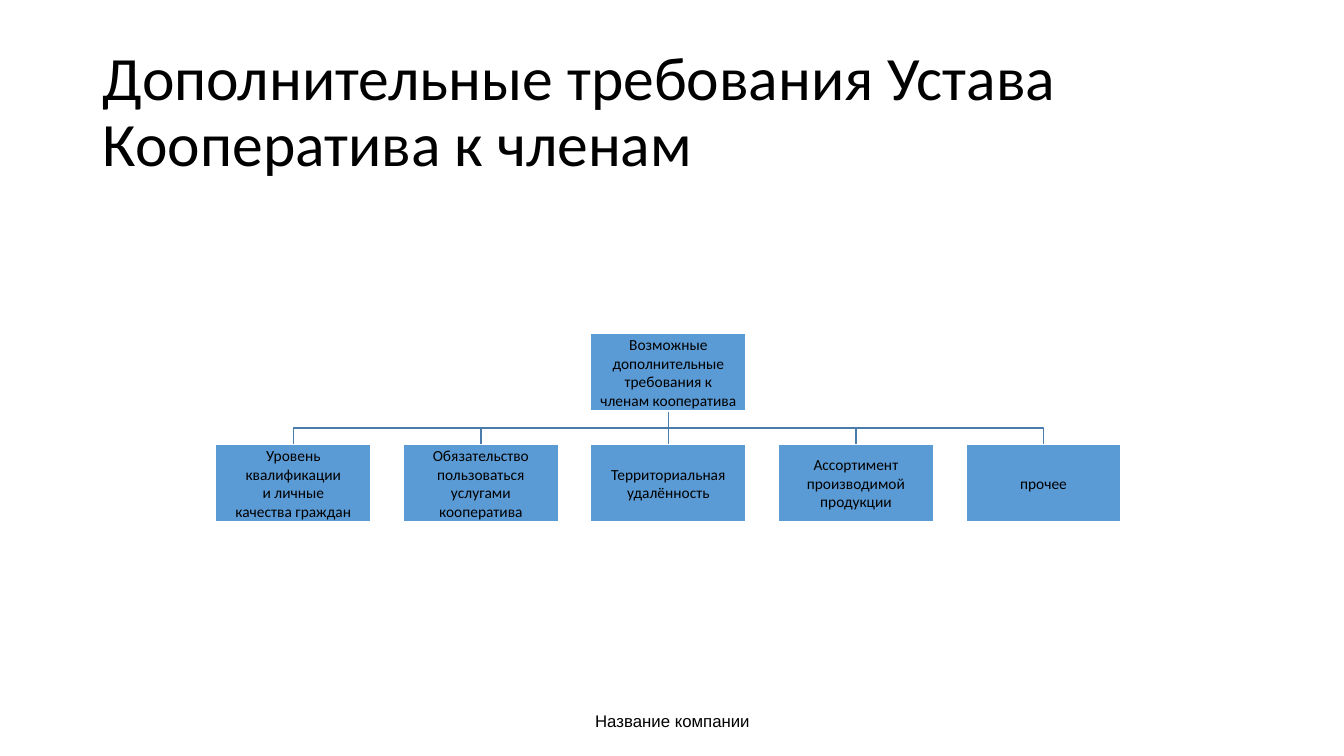
from collections import namedtuple

from lxml.etree import SubElement
from pptx import Presentation
from pptx.dml.color import RGBColor
from pptx.enum.shapes import MSO_CONNECTOR as Connector, MSO_SHAPE as Shape
from pptx.enum.text import MSO_ANCHOR as Anchor, PP_ALIGN as Align
from pptx.oxml.ns import qn
from pptx.util import Inches, Pt

BLACK = RGBColor(0x00, 0x00, 0x00)
WHITE = RGBColor(0xFF, 0xFF, 0xFF)
NODE_BLUE = RGBColor(0x5B, 0x9B, 0xD5)
LINE_BLUE = RGBColor(0x49, 0x7C, 0xAB)

Box = namedtuple("Box", "left top width height")  # inches

SLIDE_WIDTH, SLIDE_HEIGHT = 13.33, 7.5
TITLE_BOX = Box(0.92, 0.4, 11.5, 1.45)
CHART_BOX = Box(2.14, 3.31, 8.98, 1.87)
FOOTER_BOX = Box(4.42, 6.95, 4.5, 0.4)
NODE_WIDTH, NODE_HEIGHT = 1.54, 0.77

ROOT = ["Возможные", "дополнительные", "требования к", "членам кооператива"]
BRANCHES = [
    ["Уровень", "квалификации", "и личные", "качества граждан"],
    ["Обязательство", "пользоваться", "услугами", "кооператива"],
    ["Территориальная", "удалённость"],
    ["Ассортимент", "производимой", "продукции"],
    ["прочее"],
]


def inches(box):
    return [Inches(length) for length in box]


def write_text(shape, lines, size, font="Calibri", align=Align.CENTER,
               spacing=None, inset=None):
    """Fill a shape with one paragraph per line."""
    frame = shape.text_frame
    frame.word_wrap = True
    frame.vertical_anchor = Anchor.MIDDLE
    if inset is not None:
        frame.margin_left = frame.margin_right = Inches(inset)
        frame.margin_top = frame.margin_bottom = Inches(inset)
    for index, line in enumerate(lines):
        para = frame.paragraphs[0] if index == 0 else frame.add_paragraph()
        para.alignment = align
        para.line_spacing = spacing
        span = para.add_run()
        span.text = line
        span.font.name = font
        span.font.size = Pt(size)
        span.font.color.rgb = BLACK


def add_title(page, box, text):
    title = page.shapes.title
    title.left, title.top, title.width, title.height = inches(box)
    write_text(title, [text], 44, align=Align.LEFT, spacing=0.9)


def add_footer(page, box, text):
    write_text(page.shapes.add_textbox(*inches(box)), [text], 12, font="Arial")


def add_node(page, box, lines):
    node = page.shapes.add_shape(Shape.RECTANGLE, *inches(box))
    node.shadow.inherit = False
    node.fill.solid()
    node.fill.fore_color.rgb = NODE_BLUE
    node.line.color.rgb = WHITE
    node.line.width = Pt(1)
    write_text(node, lines, 11, inset=0.01)


def add_link(page, parent, child):
    """Join the bottom of the parent to the top of the child."""
    start_x = parent.left + parent.width / 2
    start_y = parent.top + parent.height
    end_x, end_y = child.left + child.width / 2, child.top
    if abs(start_x - end_x) < 0.01:
        link = page.shapes.add_connector(
            Connector.STRAIGHT, Inches(start_x), Inches(start_y),
            Inches(start_x), Inches(end_y))
        SubElement(link._element.spPr, qn("a:effectLst"))
    else:
        middle_y = (start_y + end_y) / 2
        elbow = page.shapes.build_freeform(
            Inches(start_x), Inches(start_y))
        elbow.add_line_segments(
            [(Inches(x), Inches(y)) for x, y in
             [(start_x, middle_y), (end_x, middle_y), (end_x, end_y)]],
            close=False)
        link = elbow.convert_to_shape()
        link.shadow.inherit = False
        link.fill.background()
    link.line.color.rgb = LINE_BLUE
    link.line.width = Pt(1)


def add_hierarchy(page, box, root, branches):
    """Root centred at the top, branches evenly spread along the bottom."""
    step = (box.width - NODE_WIDTH) / (len(branches) - 1)
    branch_top = box.top + box.height - NODE_HEIGHT
    root_box = Box(box.left + (box.width - NODE_WIDTH) / 2, box.top,
                   NODE_WIDTH, NODE_HEIGHT)
    branch_boxes = [Box(box.left + column * step, branch_top,
                        NODE_WIDTH, NODE_HEIGHT)
                    for column in range(len(branches))]
    # Links lie behind the nodes
    for branch_box in branch_boxes:
        add_link(page, root_box, branch_box)
    add_node(page, root_box, root)
    for branch_box, lines in zip(branch_boxes, branches):
        add_node(page, branch_box, lines)


def main():
    deck = Presentation()
    deck.slide_width = Inches(SLIDE_WIDTH)
    deck.slide_height = Inches(SLIDE_HEIGHT)
    page = deck.slides.add_slide(deck.slide_layouts.get_by_name("Title Only"))
    add_footer(page, FOOTER_BOX, "Название компании")
    add_title(page, TITLE_BOX,
              "Дополнительные требования Устава Кооператива к членам")
    add_hierarchy(page, CHART_BOX, ROOT, BRANCHES)
    deck.save("out.pptx")


if __name__ == "__main__":
    main()
